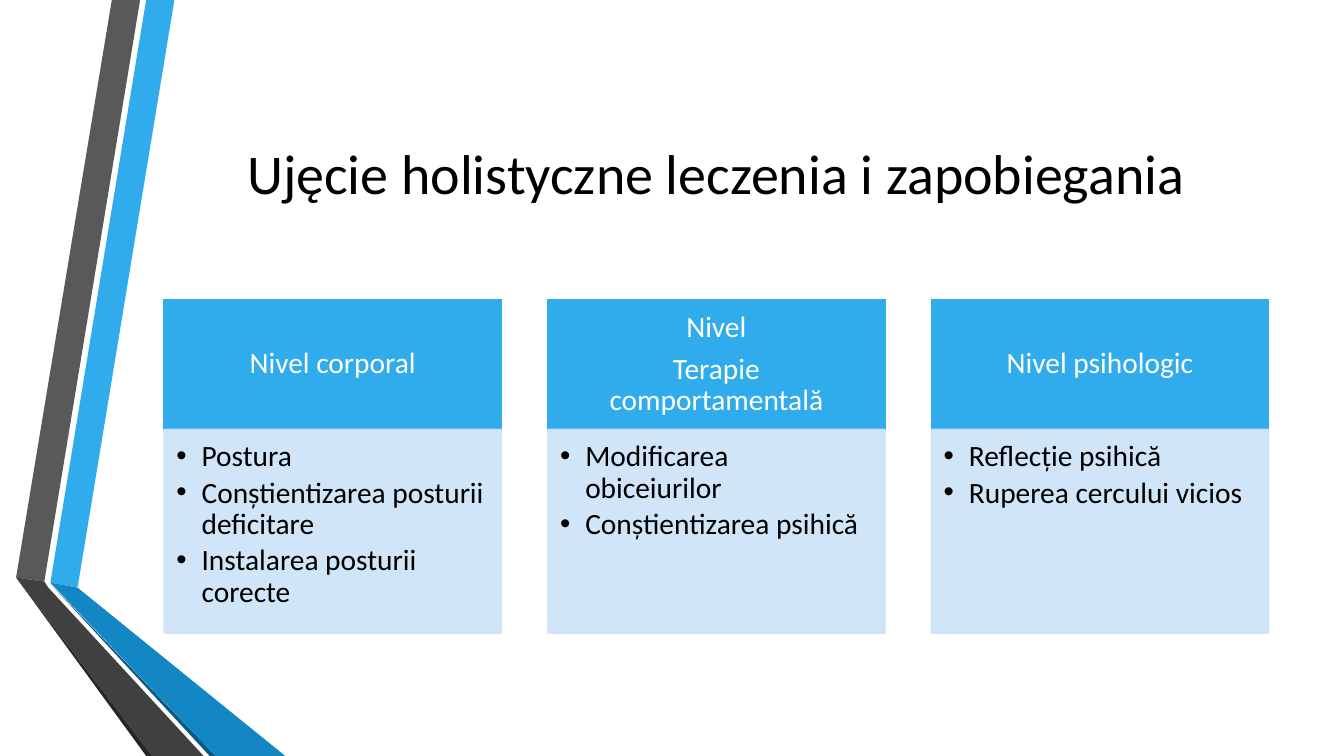
"""Build a slide with a folded ribbon, a title and three treatment-level cards."""
from dataclasses import dataclass
from typing import Any

from lxml.etree import SubElement
from pptx import Presentation
from pptx.dml.color import RGBColor
from pptx.enum.shapes import MSO_SHAPE as Preset
from pptx.enum.text import MSO_ANCHOR as Anchor, PP_ALIGN as Align
from pptx.oxml.ns import qn
from pptx.util import Inches, Pt

FONT = "Calibri"
BLUE, PALE, WHITE, BLACK = "30ACEC", "CDE3F8", "FFFFFF", "000000"
CARD_LEFT, CARD_WIDTH, CARD_PITCH = 1.63, 3.34, 3.805
HEADER_TOP, HEADER_HEIGHT, BODY_HEIGHT = 2.97, 1.29, 2.02
BULLET_INDENT = 0.25


@dataclass(frozen=True)
class RibbonFace:
    color: str
    points: tuple[tuple[float, float], ...]


@dataclass(frozen=True)
class Card:
    heading: tuple[str, ...]
    bullets: tuple[str, ...]


@dataclass(frozen=True)
class TextStyle:
    size: float
    color: str
    frame: dict[str, Any]
    paragraph: dict[str, Any]
    bulleted: bool = False


def frame_format(anchor: Anchor, left: float, top: float, right: float, bottom: float) -> dict[str, Any]:
    return {
        "word_wrap": True,
        "vertical_anchor": anchor,
        "margin_left": Inches(left),
        "margin_top": Inches(top),
        "margin_right": Inches(right),
        "margin_bottom": Inches(bottom),
    }


RIBBON = (
    RibbonFace(BLUE, ((0.5, 5.78), (0.77, 5.83), (1.73, 0), (1.45, 0))),
    RibbonFace("595959", ((1.39, 0), (1.11, 0), (0.16, 5.73), (0.44, 5.77))),
    RibbonFace("262626", ((0.16, 5.73), (1.45, 7.5), (1.51, 7.5))),
    RibbonFace("0C5A82", ((0.5, 5.79), (2.08, 7.5), (2.14, 7.5))),
    RibbonFace("1287C3", ((0.5, 5.78), (2.14, 7.5), (2.83, 7.5), (0.77, 5.83))),
    RibbonFace("404040", ((0.16, 5.73), (1.51, 7.5), (2.02, 7.5), (0.48, 5.83), (0.44, 5.77))),
)
CARDS = (
    Card(("Nivel corporal",),
         ("Postura", "Conștientizarea posturii deficitare", "Instalarea posturii corecte")),
    Card(("Nivel", "Terapie comportamentală"),
         ("Modificarea obiceiurilor", "Conștientizarea psihică")),
    Card(("Nivel psihologic",),
         ("Reflecție psihică", "Ruperea cercului vicios")),
)
TITLE_STYLE = TextStyle(40, BLACK, frame_format(Anchor.MIDDLE, 0.1, 0.05, 0.1, 0.05),
                        {"alignment": Align.CENTER})
HEADER_STYLE = TextStyle(21, WHITE, frame_format(Anchor.MIDDLE, 0.16, 0.09, 0.16, 0.09),
                         {"alignment": Align.CENTER, "line_spacing": 0.9, "space_after": Pt(7.35)})
BODY_STYLE = TextStyle(21, BLACK, frame_format(Anchor.TOP, 0.12, 0.12, 0.16, 0.18),
                       {"alignment": Align.LEFT, "line_spacing": 0.9, "space_after": Pt(3.15)}, True)


def set_color(target: Any, color: str, opacity: int = 100) -> None:
    target.rgb = RGBColor.from_string(color)
    if opacity < 100:
        alpha = SubElement(target._xFill.find(qn("a:srgbClr")), qn("a:alpha"))
        alpha.set("val", str(opacity * 1000))


def apply_format(target: Any, values: dict[str, Any]) -> None:
    for name, value in values.items():
        setattr(target, name, value)


def add_bullet(paragraph: Any) -> None:
    properties = paragraph._p.get_or_add_pPr()
    properties.set("marL", str(Inches(BULLET_INDENT)))
    properties.set("indent", str(-Inches(BULLET_INDENT)))
    SubElement(properties, qn("a:buFont")).set("typeface", "Arial")
    SubElement(properties, qn("a:buChar")).set("char", "•")


def write_text(shape: Any, lines: tuple[str, ...], style: TextStyle) -> None:
    frame = shape.text_frame
    apply_format(frame, style.frame)
    frame.text = "\n".join(lines)
    for paragraph in frame.paragraphs:
        apply_format(paragraph, style.paragraph)
        if style.bulleted:
            add_bullet(paragraph)
        for run in paragraph.runs:
            apply_format(run.font, {"name": FONT, "size": Pt(style.size)})
            set_color(run.font.color, style.color)


def add_ribbon_face(slide: Any, face: RibbonFace) -> None:
    start, *rest = [(Inches(x), Inches(y)) for x, y in face.points]
    builder = slide.shapes.build_freeform(*start)
    builder.add_line_segments(rest, close=True)
    shape = builder.convert_to_shape()
    shape.shadow.inherit = False
    shape.fill.solid()
    set_color(shape.fill.fore_color, face.color)
    shape.line.fill.background()


def add_panel(slide: Any, left: float, top: float, height: float, color: str, opacity: int) -> Any:
    shape = slide.shapes.add_shape(
        Preset.RECTANGLE, Inches(left), Inches(top), Inches(CARD_WIDTH), Inches(height))
    shape.shadow.inherit = False
    shape.line.width = Pt(1.25)
    for fill in (shape.fill, shape.line.fill):
        fill.solid()
        set_color(fill.fore_color, color, opacity)
    return shape


def add_card(slide: Any, card: Card, left: float) -> None:
    header = add_panel(slide, left, HEADER_TOP, HEADER_HEIGHT, BLUE, 100)
    write_text(header, card.heading, HEADER_STYLE)
    body = add_panel(slide, left, HEADER_TOP + HEADER_HEIGHT, BODY_HEIGHT, PALE, 90)
    write_text(body, card.bullets, BODY_STYLE)


def main() -> None:
    presentation = Presentation()
    apply_format(presentation, {"slide_width": Inches(13.33), "slide_height": Inches(7.5)})
    slide = presentation.slides.add_slide(presentation.slide_layouts[6])
    for face in RIBBON:
        add_ribbon_face(slide, face)
    title = slide.shapes.add_textbox(Inches(1.62), Inches(0.75), Inches(10.96), Inches(1.92))
    write_text(title, ("Ujęcie holistyczne leczenia i zapobiegania",), TITLE_STYLE)
    for index, card in enumerate(CARDS):
        add_card(slide, card, CARD_LEFT + index * CARD_PITCH)
    presentation.save("out.pptx")


if __name__ == "__main__":
    main()
